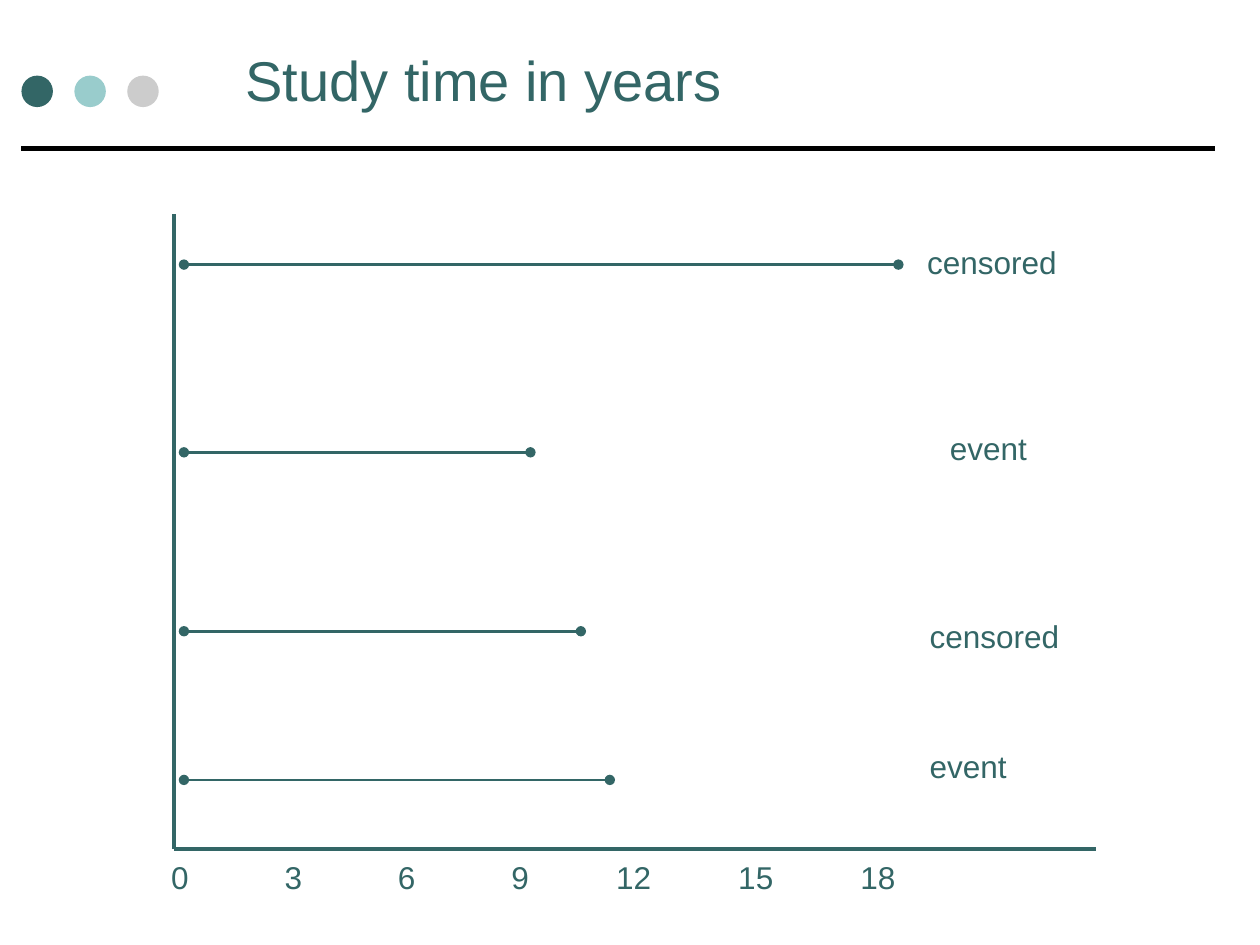
from lxml import etree
from pptx import Presentation
from pptx.dml.color import RGBColor
from pptx.enum.shapes import MSO_CONNECTOR, MSO_SHAPE
from pptx.enum.text import MSO_ANCHOR, PP_ALIGN
from pptx.oxml.ns import qn
from pptx.util import Inches, Pt

STRAIGHT = MSO_CONNECTOR.STRAIGHT
OVAL = MSO_SHAPE.OVAL
MIDDLE = MSO_ANCHOR.MIDDLE
LEFT = PP_ALIGN.LEFT
TEAL = "336666"
FONT = "Arial"


def paint(color_format, color):
    color_format.rgb = RGBColor.from_string(color)


def write_text(frame, text, size=18, color=TEAL, wrap=False, anchor=None):
    frame.word_wrap = wrap
    if anchor is not None:
        frame.vertical_anchor = anchor
    para = frame.paragraphs[0]
    para.alignment = LEFT
    span = para.add_run()
    span.text = text
    span.font.name = FONT
    span.font.size = Pt(size)
    paint(span.font.color, color)
    return para


def add_line(page, start, end, width, color=TEAL, dots=False):
    ends = [Inches(value) for value in (*start, *end)]
    line = page.shapes.add_connector(STRAIGHT, *ends)
    line.line.width = Pt(width)
    paint(line.line.color, color)
    properties = line._element.spPr
    if dots:
        outline = properties.find(qn("a:ln"))
        for tag in ("a:headEnd", "a:tailEnd"):
            etree.SubElement(outline, qn(tag), type="oval")
    etree.SubElement(properties, qn("a:effectLst"))


def add_header(page, left, top, width, height):
    for index, color in enumerate((TEAL, "99CCCC", "CCCCCC")):
        dot = page.shapes.add_shape(
            OVAL, Inches(left + 0.42 * index), Inches(top + 0.6),
            Inches(0.25), Inches(0.25))
        dot.shadow.inherit = False
        dot.fill.solid()
        paint(dot.fill.fore_color, color)
        dot.line.fill.background()
    rule_y = top + 1.18
    add_line(page, (left, rule_y), (left + width, rule_y), 3, "000000")
    title = page.shapes.title
    title.left, title.top = Inches(left + 1.68), Inches(top)
    title.width, title.height = Inches(6.91), Inches(height)
    write_text(title.text_frame, "Study time in years", size=32, wrap=True,
               anchor=MIDDLE)


def add_axes(page, left, top, width, height):
    bottom = top + height
    add_line(page, (left, top), (left, bottom), 2.25)
    add_line(page, (left, bottom), (left + width, bottom), 2.25)
    box = page.shapes.add_textbox(
        Inches(left - 0.18), Inches(bottom + 0.02), Inches(8.37), Inches(0.4))
    years = range(0, 19, 3)
    para = write_text(box.text_frame, "".join(f"\t{year}" for year in years),
                      wrap=True)
    stops = etree.SubElement(para._p.get_or_add_pPr(), qn("a:tabLst"))
    for index in range(len(years)):
        position = 0.13 + 0.9 * index + 0.07 * max(0, index - 4)
        etree.SubElement(stops, qn("a:tab"), pos=str(Inches(position)),
                         algn="ctr")


def add_patients(page, left, top):
    patients = (
        (0.4, 5.67, "censored", 7.26, 1.88),
        (1.89, 2.75, "event", 7.44, 3.36),
        (3.31, 3.15, "censored", 7.28, 4.85),
        (4.49, 3.38, "event", 7.28, 5.88),
    )
    start = left + 0.08
    for offset, length, outcome, label_left, label_top in patients:
        y = top + offset
        add_line(page, (start, y), (start + length, y), 1.5, dots=True)
        label_width = 1.23 if outcome == "censored" else 0.82
        box = page.shapes.add_textbox(
            Inches(label_left), Inches(label_top),
            Inches(label_width), Inches(0.4))
        write_text(box.text_frame, outcome)


def main():
    deck = Presentation()
    deck.slide_width, deck.slide_height = Inches(10), Inches(7.5)
    page = deck.slides.add_slide(deck.slide_layouts[5])
    add_header(page, 0.17, 0, 9.47, 1.25)
    add_axes(page, 1.38, 1.7, 7.32, 5.04)
    add_patients(page, 1.38, 1.7)
    deck.save("out.pptx")


if __name__ == "__main__":
    main()
